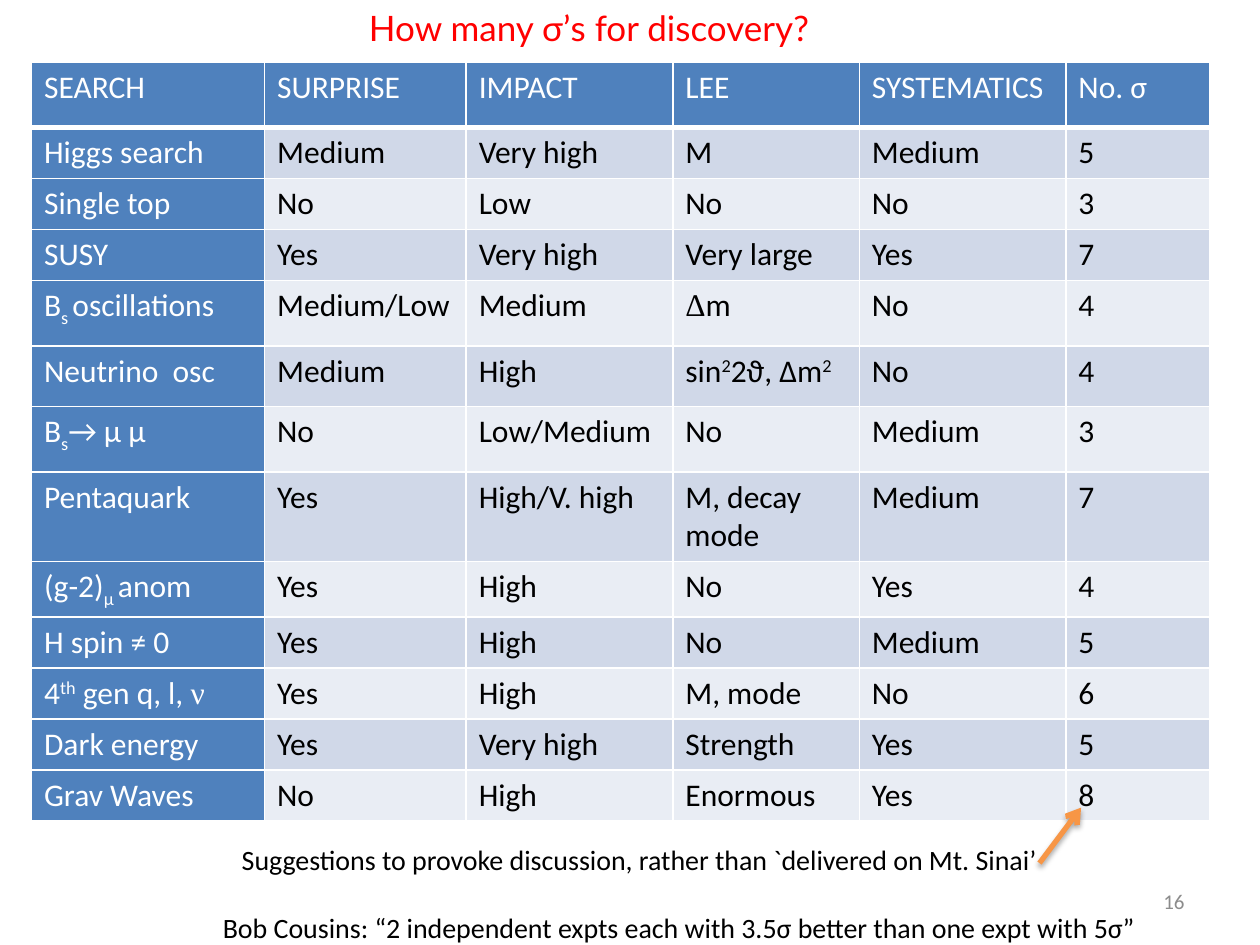
from lxml import etree
from pptx import Presentation
from pptx.dml.color import RGBColor
from pptx.enum.shapes import MSO_CONNECTOR
from pptx.enum.text import MSO_ANCHOR, PP_ALIGN
from pptx.oxml.ns import qn
from pptx.util import Inches, Pt

STRAIGHT = MSO_CONNECTOR.STRAIGHT
MIDDLE = MSO_ANCHOR.MIDDLE
LEFT, RIGHT = PP_ALIGN.LEFT, PP_ALIGN.RIGHT

BODY, SERIF, HEADING = "Calibri", "Times New Roman", "Lato"
WHITE, BLACK, BLUE = "FFFFFF", "000000", "4F81BD"
BANDS = ["D0D8E8", "E9EDF4"]
SUB, SUPER = -25, 30

# A cell is a string or a list of runs: (text, baseline shift, font)
HEADER = ["SEARCH", "SURPRISE", "IMPACT", "LEE", "SYSTEMATICS", "No. σ"]
SEARCHES = [
    ["Higgs search", "Medium", "Very high", "M", "Medium", "5"],
    ["Single top", "No", "Low", "No", "No", "3"],
    ["SUSY", "Yes", "Very high", "Very large", "Yes", "7"],
    [[("B", 0, BODY), ("s ", SUB, BODY), ("oscillations", 0, BODY)],
     "Medium/Low", "Medium", [("Δ", 0, SERIF), ("m", 0, BODY)], "No", "4"],
    ["Neutrino  osc", "Medium", "High",
     [("sin", 0, BODY), ("2", SUPER, BODY), ("2ϑ, Δm", 0, BODY), ("2", SUPER, BODY)],
     "No", "4"],
    [[("B", 0, BODY), ("s", SUB, BODY), ("→ μ μ", 0, BODY)],
     "No", "Low/Medium", "No", "Medium", "3"],
    ["Pentaquark", "Yes", "High/V. high", "M, decay mode", "Medium", "7"],
    [[("(g-2)", 0, BODY), ("μ ", SUB, BODY), ("anom", 0, BODY)],
     "Yes", "High", "No", "Yes", "4"],
    ["H spin ≠ 0", "Yes", "High", "No", "Medium", "5"],
    [[("4", 0, BODY), ("th", SUPER, BODY), (" gen q, l, ", 0, BODY), ("ν", 0, SERIF)],
     "Yes", "High", "M, mode", "No", "6"],
    ["Dark energy", "Yes", "Very high", "Strength", "Yes", "5"],
    ["Grav Waves", "No", "High", "Enormous", "Yes", "8"],
]
COLUMN_WIDTHS = [1.85, 1.6, 1.64, 1.48, 1.64, 1.14]
ROW_HEIGHTS = [0.52, 0.34, 0.34, 0.34, 0.52, 0.48, 0.52, 0.6] + [0.34] * 5

TITLE = "How many σ’s for discovery?"
REMARK = "Suggestions to provoke discussion, rather than `delivered on Mt. Sinai’"
QUOTE = "Bob Cousins: “2 independent expts each with 3.5σ better than one expt with 5σ”"
PAGE = "16"


def rgb(color):
    return RGBColor.from_string(color)


def add_run(paragraph, text, size, color, font=BODY, baseline=0):
    run = paragraph.add_run()
    run.text = text
    run.font.size = Pt(size)
    run.font.name = font
    run.font.color.rgb = rgb(color)
    if baseline:
        run.font._element.set("baseline", str(baseline * 1000))


def add_text(slide, box, lines, size, color, font=BODY, align=LEFT):
    frame = slide.shapes.add_textbox(*map(Inches, box)).text_frame
    frame.word_wrap = True
    for index, line in enumerate(lines):
        paragraph = frame.add_paragraph() if index else frame.paragraphs[0]
        paragraph.alignment = align
        add_run(paragraph, line, size, color, font)
    return frame


def set_borders(cell, widths):
    """Draw white borders; widths are points for left, right, top, bottom."""
    properties = cell._tc.get_or_add_tcPr()
    for index, (side, width) in enumerate(zip("LRTB", widths)):
        line = etree.Element(qn(f"a:ln{side}"), w=str(Pt(width)))
        fill = etree.SubElement(line, qn("a:solidFill"))
        etree.SubElement(fill, qn("a:srgbClr"), val=WHITE)
        properties.insert(index, line)


def add_search_table(slide):
    rows = [HEADER] + SEARCHES
    table = slide.shapes.add_table(
        len(rows), len(HEADER), Inches(0.25), Inches(0.49),
        Inches(sum(COLUMN_WIDTHS)), Inches(sum(ROW_HEIGHTS))).table
    table.first_row = table.horz_banding = False
    for column, width in zip(table.columns, COLUMN_WIDTHS):
        column.width = Inches(width)
    for r, (row, height) in enumerate(zip(rows, ROW_HEIGHTS)):
        table.rows[r].height = Inches(height)
        for c, content in enumerate(row):
            cell = table.cell(r, c)
            heading = r == 0 or c == 0
            cell.fill.solid()
            cell.fill.fore_color.rgb = rgb(BLUE if heading else BANDS[(r - 1) % 2])
            set_borders(cell, (1, 1, 1, 1 if r else 3))
            runs = [(content, 0, BODY)] if isinstance(content, str) else content
            for text, baseline, font in runs:
                add_run(cell.text_frame.paragraphs[0], text, 18,
                        WHITE if heading else BLACK, font, baseline)


def add_arrow(slide, start, end):
    arrow = slide.shapes.add_connector(STRAIGHT, *map(Inches, start + end))
    arrow.line.color.rgb = rgb("F79646")
    arrow.line.width = Pt(3)
    etree.SubElement(arrow.line._get_or_add_ln(), qn("a:tailEnd"), type="arrow")
    effects = etree.SubElement(arrow._element.spPr, qn("a:effectLst"))
    shadow = etree.SubElement(effects, qn("a:outerShdw"), blurRad=str(Pt(3.1)),
                              dist=str(Pt(1.8)), dir="5400000", rotWithShape="0")
    shade = etree.SubElement(shadow, qn("a:srgbClr"), val=BLACK)
    etree.SubElement(shade, qn("a:alpha"), val="35000")


def main():
    deck = Presentation()
    deck.slide_width, deck.slide_height = Inches(10), Inches(7.5)
    slide = deck.slides.add_slide(deck.slide_layouts[6])

    add_search_table(slide)
    page = add_text(slide, (7.17, 6.95, 2.33, 0.4), [PAGE], 12, "8C8C8C", align=RIGHT)
    page.vertical_anchor = MIDDLE
    notes = add_text(slide, (1.67, 6.64, 7.75, 0.91), [REMARK, QUOTE], 16, BLACK)
    remark, quote = notes.paragraphs
    remark._p.get_or_add_pPr().set("marL", str(Inches(0.15)))
    quote.space_before = Pt(19.5)
    add_arrow(slide, (8.25, 6.85), (8.58, 6.41))
    add_text(slide, (2.83, 0, 4.42, 0.44), [TITLE], 20, "FF0000", HEADING)

    deck.save("out.pptx")


if __name__ == "__main__":
    main()
